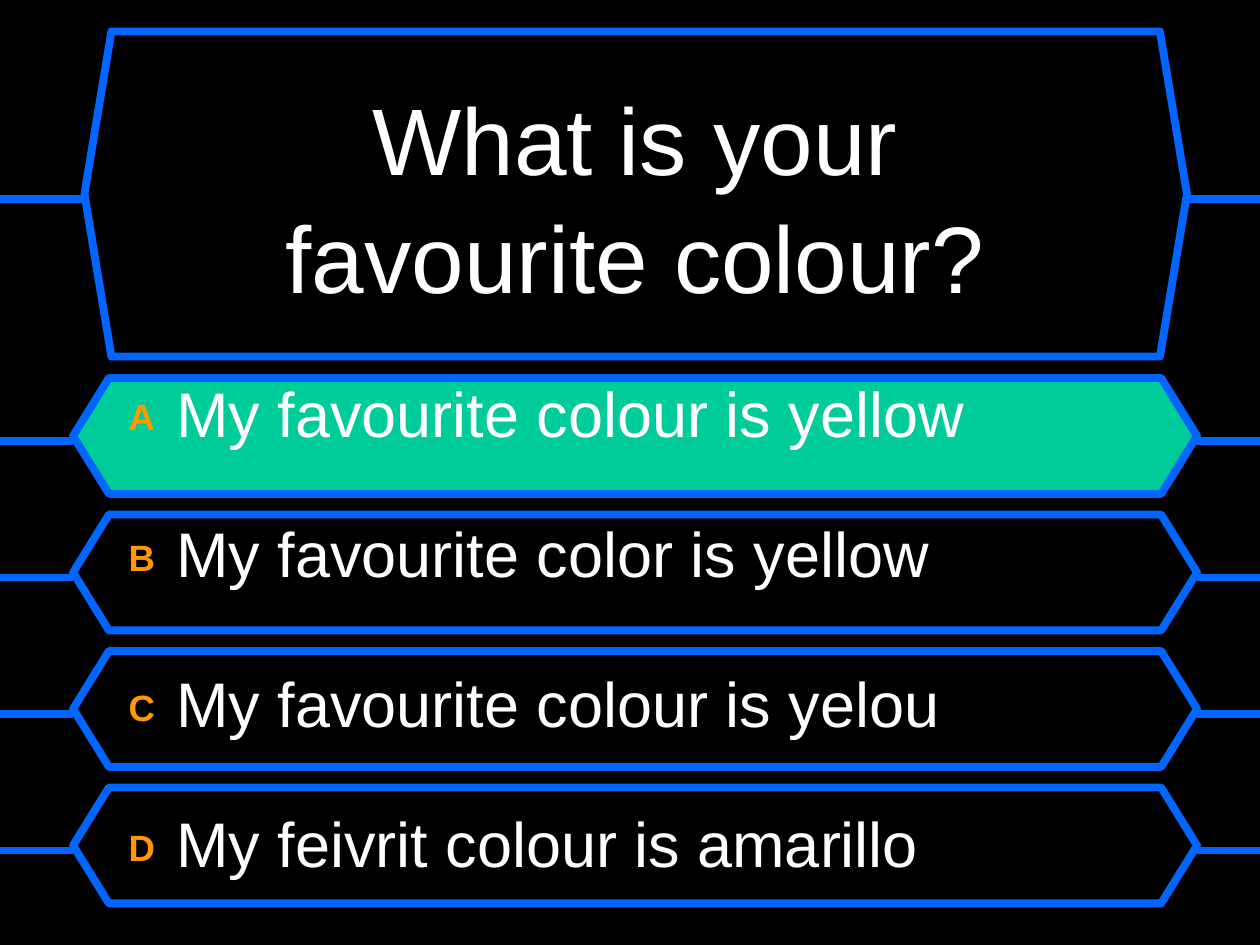
from pptx import Presentation
from pptx.dml.color import RGBColor
from pptx.enum.shapes import MSO_CONNECTOR, MSO_SHAPE
from pptx.enum.text import MSO_ANCHOR, MSO_AUTO_SIZE, PP_ALIGN
from pptx.oxml.ns import qn
from pptx.util import Inches, Pt
from lxml.etree import SubElement

WIDTH, HEIGHT = 10, 7.5
BLACK, WHITE, BLUE, GREEN, ORANGE = "000000", "FFFFFF", "0066FF", "00CC99", "FF9900"
QUESTION = ["What is your", "favourite colour?"]
# Letter, answer, space before in points, panel fill
ANSWERS = [
    ("A", "My favourite colour is yellow", 3.5, GREEN),
    ("B", "My favourite color is yellow", 37, BLACK),
    ("C", "My favourite colour is yelou", 42.5, BLACK),
    ("D", "My feivrit colour is amarillo", 37, BLACK),
]
ANSWER_TOP, ANSWER_PITCH = 3, 3.25 / 3


def rgb(color):
    return RGBColor.from_string(color)


def add_wire(slide, x1, x2, y):
    line = slide.shapes.add_connector(
        MSO_CONNECTOR.STRAIGHT, Inches(x1), Inches(y), Inches(x2), Inches(y))
    line.line.color.rgb = rgb(BLUE)
    line.line.width = Pt(4.5)
    SubElement(line._element.spPr, qn("a:effectLst"))


def add_panel(slide, left, top, width, height, point, fill, wire_y):
    """Add a hexagon with a wire from each side to the slide's edge."""
    sp = slide.shapes.add_shape(
        MSO_SHAPE.HEXAGON, Inches(left), Inches(top), Inches(width), Inches(height))
    sp.adjustments[0] = point
    sp.shadow.inherit = False
    sp.fill.solid()
    sp.fill.fore_color.rgb = rgb(fill)
    sp.line.color.rgb = rgb(BLUE)
    sp.line.width = Pt(4.5)
    add_wire(slide, left, 0, wire_y)
    add_wire(slide, WIDTH, left + width, wire_y)


def place(sp, left, top, width, height, anchor):
    """Move a placeholder, bring it to the front and return its text frame."""
    sp.left, sp.top, sp.width, sp.height = map(Inches, (left, top, width, height))
    sp._element.getparent().append(sp._element)
    tf = sp.text_frame
    tf.word_wrap = True
    tf.auto_size = MSO_AUTO_SIZE.NONE
    tf.vertical_anchor = anchor
    return tf


def add_run(p, text, size, color, bold=False):
    r = p.add_run()
    r.text = text
    r.font.name = "Arial"
    r.font.size = Pt(size)
    r.font.bold = bold
    r.font.color.rgb = rgb(color)
    return r


def add_question(slide):
    tf = place(slide.shapes.title, 0.83, 0.42, 8.42, 2.25, MSO_ANCHOR.MIDDLE)
    p = tf.paragraphs[0]
    p.alignment = PP_ALIGN.CENTER
    p.line_spacing = 1.04
    for i, text in enumerate(QUESTION):
        if i:
            p.add_line_break()
        add_run(p, text, 54, WHITE)


def add_answers(slide):
    tf = place(slide.placeholders[1], 0.92, 2.92, 8.33, 4.33, MSO_ANCHOR.TOP)
    for i, (letter, answer, space, _) in enumerate(ANSWERS):
        p = tf.add_paragraph() if i else tf.paragraphs[0]
        p.space_before = Pt(space)
        pPr = p._p.get_or_add_pPr()
        pPr.set("marL", str(Inches(0.38)))
        pPr.set("indent", str(-Inches(0.38)))
        SubElement(pPr, qn("a:buNone"))
        r = add_run(p, letter, 36, ORANGE, bold=True)
        r.font._element.set("baseline", "10000")
        add_run(p, "\t" + answer, 36, WHITE)


def main():
    prs = Presentation()
    prs.slide_width, prs.slide_height = Inches(WIDTH), Inches(HEIGHT)
    slide = prs.slides.add_slide(prs.slide_layouts[1])
    slide.background.fill.solid()
    slide.background.fill.fore_color.rgb = rgb(BLACK)
    add_panel(slide, 0.67, 0.25, 8.75, 2.58, 0.083, BLACK, 1.58)
    for i, (_, _, _, fill) in enumerate(ANSWERS):
        top = ANSWER_TOP + i * ANSWER_PITCH
        add_panel(slide, 0.58, top, 8.92, 0.92, 0.309, fill, top + 0.5)
    add_question(slide)
    add_answers(slide)
    prs.save("out.pptx")


if __name__ == "__main__":
    main()
